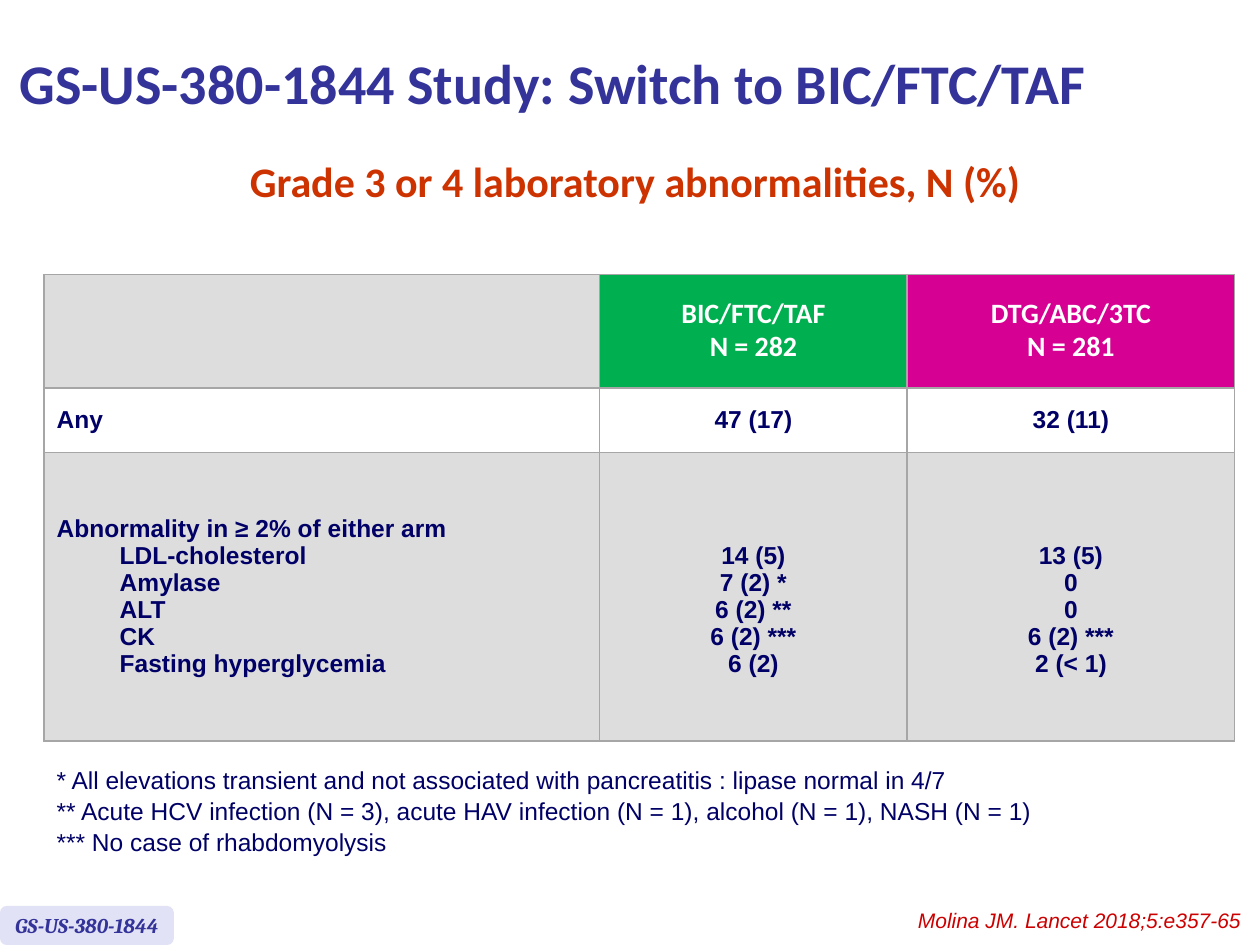
from dataclasses import dataclass

from lxml.etree import SubElement
from pptx import Presentation
from pptx.dml.color import RGBColor
from pptx.enum.shapes import MSO_SHAPE as Shape
from pptx.enum.text import MSO_ANCHOR as Anchor, PP_ALIGN as Align
from pptx.oxml.ns import qn
from pptx.util import Inches, Pt


@dataclass(frozen=True)
class Theme:
    navy: str = "000066"
    indigo: str = "333399"
    lavender: str = "E2E2F6"
    rust: str = "CC3300"
    red: str = "CC0000"
    green: str = "00B050"
    magenta: str = "D60093"
    white: str = "FFFFFF"
    grey: str = "DDDDDD"
    border: str = "A6A6A6"
    title: int = 32
    subtitle: int = 24
    header: int = 16
    body: int = 14
    small: int = 12


theme = Theme()


def write(frame, lines, font, size, color, align=Align.LEFT, bold=False,
          italic=False, spacing=None, anchor=Anchor.TOP, wrap=True):
    """Fill a text frame, one paragraph a line, and return the paragraphs."""
    frame.text = "\n".join(lines)
    frame.word_wrap = wrap
    frame.vertical_anchor = anchor
    for para in frame.paragraphs:
        para.alignment = align
        para.line_spacing = spacing
        para.font.name = font
        para.font.size = Pt(size)
        para.font.bold = bold
        para.font.italic = italic
        para.font.color.rgb = RGBColor.from_string(color)
    return frame.paragraphs


def add_text(left, top, width, height, lines, *style, **options):
    box = page.shapes.add_textbox(Inches(left), Inches(top), Inches(width), Inches(height))
    write(box.text_frame, lines, *style, **options)


deck = Presentation()
deck.slide_width, deck.slide_height = Inches(10), Inches(7.5)
page = deck.slides.add_slide(deck.slide_layouts[6])

# Table of laboratory abnormalities
column_widths = [4.41, 2.44, 2.6]
row_heights = [0.9, 0.51, 2.29]
rows = [
    [[], ["BIC/FTC/TAF", "N = 282"], ["DTG/ABC/3TC", "N = 281"]],
    [["Any"], ["47 (17)"], ["32 (11)"]],
    [
        ["Abnormality in ≥ 2% of either arm", "LDL-cholesterol", "Amylase",
         "ALT", "CK", "Fasting hyperglycemia"],
        ["14 (5)", "7 (2) *", "6 (2) **", "6 (2) ***", "6 (2)"],
        ["13 (5)", "0", "0", "6 (2) ***", "2 (< 1)"],
    ],
]
fills = [
    [theme.grey, theme.green, theme.magenta],
    [theme.white] * 3,
    [theme.grey] * 3,
]
table = page.shapes.add_table(
    len(rows), len(column_widths), Inches(0.35), Inches(2.18),
    Inches(sum(column_widths)), Inches(sum(row_heights))).table
table.first_row = table.horz_banding = False
for column, width in zip(table.columns, column_widths):
    column.width = Inches(width)
for row, height in zip(table.rows, row_heights):
    row.height = Inches(height)

for r, row in enumerate(rows):
    for c, lines in enumerate(row):
        cell = table.cell(r, c)
        align = Align.CENTER if c else Align.LEFT
        if r == 0:
            style = ("Calibri", theme.header, theme.white, align, True, False, 0.8)
        else:
            style = ("Arial", theme.body, theme.navy, align, True, False, 0.98)
        paras = write(cell.text_frame, lines, *style)
        cell.vertical_anchor = Anchor.MIDDLE
        for para in paras[1:]:
            if r == 0:
                para.space_before = Pt(3.2)
            elif c == 0:
                para._p.get_or_add_pPr().set("marL", str(Inches(0.5)))
        # Counts start one line below the heading of the label column
        if r == 2 and c:
            cell.margin_top = Inches(0.27)
        # Borders come before the fill in the cell properties
        props = cell._tc.get_or_add_tcPr()
        for side in ("lnL", "lnR", "lnT", "lnB"):
            line = SubElement(props, qn(f"a:{side}"), w=str(Pt(1)))
            paint = SubElement(line, qn("a:solidFill"))
            SubElement(paint, qn("a:srgbClr"), val=theme.border)
        cell.fill.solid()
        cell.fill.fore_color.rgb = RGBColor.from_string(fills[r][c])

# Title and subtitle
add_text(0.06, 0.05, 8.96, 1.21, ["GS-US-380-1844 Study: Switch to BIC/FTC/TAF"],
         "Calibri", theme.title, theme.indigo, bold=True, anchor=Anchor.MIDDLE)
add_text(0.15, 1.37, 9.78, 0.35, ["Grade 3 or 4 laboratory abnormalities, N (%)"],
         "Calibri", theme.subtitle, theme.rust, Align.CENTER, bold=True,
         spacing=Pt(15.2))

# Footnotes
add_text(0.35, 6.01, 7.95, 0.81, [
    "* All elevations transient and not associated with pancreatitis : lipase normal in 4/7",
    "** Acute HCV infection (N = 3), acute HAV infection (N = 1), alcohol (N = 1), NASH (N = 1)",
    "*** No case of rhabdomyolysis",
], "Arial", theme.body, theme.navy, spacing=1.05, wrap=False)

# Study tag
tag = page.shapes.add_shape(Shape.ROUNDED_RECTANGLE, Inches(0), Inches(7.19),
                            Inches(1.38), Inches(0.31))
tag.shadow.inherit = False
tag.fill.solid()
tag.fill.fore_color.rgb = RGBColor.from_string(theme.lavender)
tag.line.fill.background()
write(tag.text_frame, ["GS-US-380-1844"], "Cambria", theme.small, theme.indigo,
      Align.CENTER, bold=True, italic=True, anchor=Anchor.MIDDLE, wrap=False)

# Citation
add_text(6.45, 7.15, 3.5, 0.3, ["Molina JM. Lancet 2018;5:e357-65"],
         "Arial", theme.small, theme.red, Align.RIGHT, italic=True)

deck.save("out.pptx")
